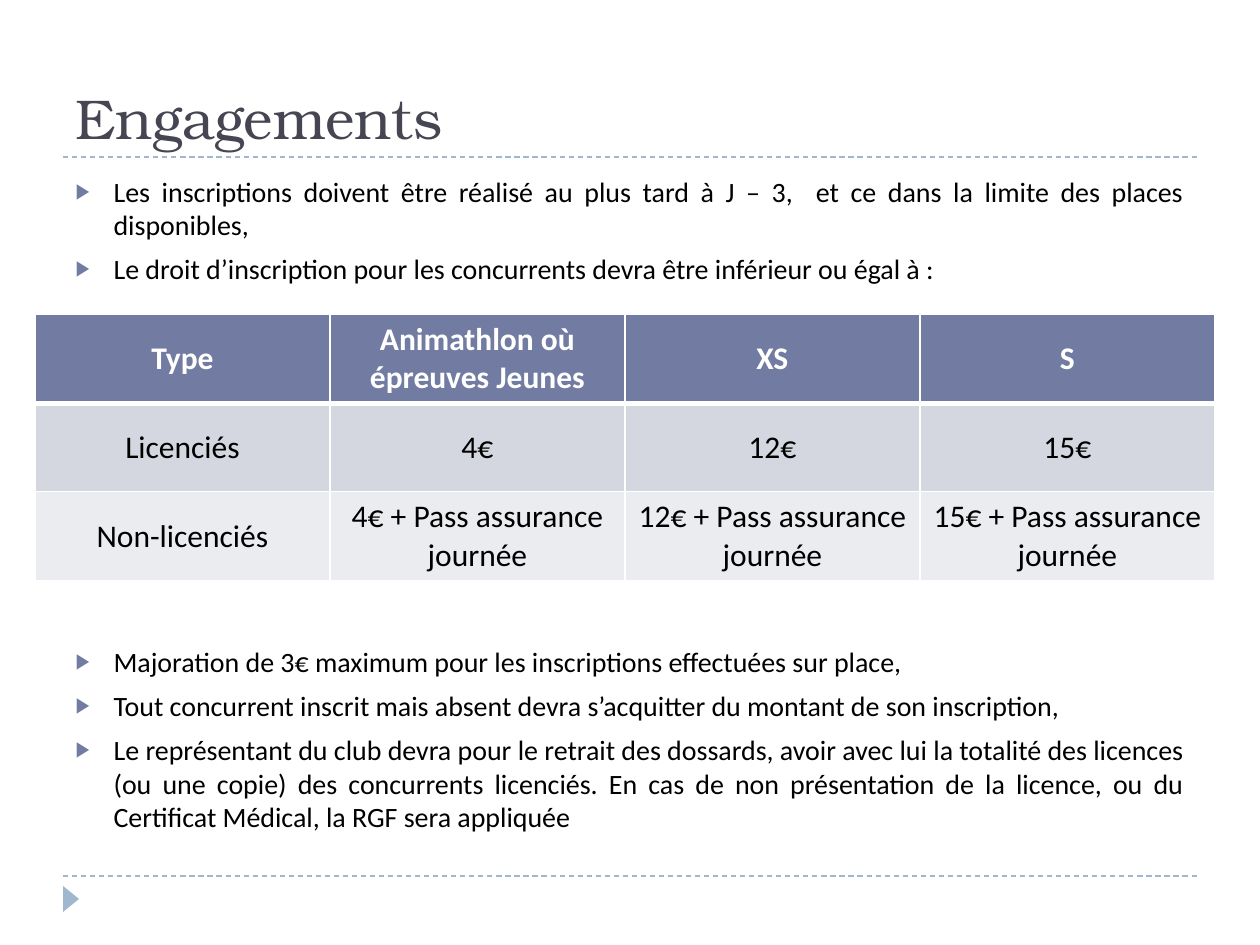
from lxml.etree import SubElement
from pptx import Presentation
from pptx.dml.color import RGBColor
from pptx.enum.dml import MSO_LINE
from pptx.enum.shapes import MSO_CONNECTOR, MSO_SHAPE
from pptx.enum.text import MSO_ANCHOR as Anchor, MSO_AUTO_SIZE, PP_ALIGN as Align
from pptx.oxml.ns import qn
from pptx.util import Pt

EMU_PER_PX = 914400 / 126
INDENT = 38
ACCENT, PALE, BLACK, WHITE = "727CA3", "9FB8CD", "000000", "FFFFFF"
BODY_FONT, TITLE_FONT = "Calibri", "TeX Gyre Bonum"

# Each bullet with the space before it in points; the third clears the table
BULLETS = [
    ("Les inscriptions doivent être réalisé au plus tard à J – 3,  et ce dans la "
     "limite des places disponibles,", 6),
    ("Le droit d’inscription pour les concurrents devra être inférieur ou égal à :", 6),
    ("Majoration de 3€ maximum pour les inscriptions effectuées sur place,", 205),
    ("Tout concurrent inscrit mais absent devra s’acquitter du montant de son "
     "inscription,", 6),
    ("Le représentant du club devra pour le retrait des dossards, avoir avec lui la "
     "totalité des licences (ou une copie) des concurrents licenciés. En cas de non "
     "présentation de la licence, ou du Certificat Médical, la RGF sera appliquée", 6),
]
PRICES = ["4€", "12€", "15€"]
FEES = [
    ["Type", "Animathlon où épreuves Jeunes", "XS", "S"],
    ["Licenciés", *PRICES],
    ["Non-licenciés", *[f"{price} + Pass assurance journée" for price in PRICES]],
]
ROW_FILLS = [ACCENT, "D5D7E0", "EBECF0"]


def px(length):
    return round(length * EMU_PER_PX)


def color(code):
    return RGBColor.from_string(code)


def place(shape, left, top, width, height):
    shape.left, shape.top = px(left), px(top)
    shape.width, shape.height = px(width), px(height)


def write(para, text, size=16, font=BODY_FONT, ink=BLACK, bold=False, align=Align.LEFT):
    para.alignment = align
    span = para.add_run()
    span.text = text
    span.font.size, span.font.name, span.font.bold = Pt(size), font, bold
    span.font.color.rgb = color(ink)


def add_bullet(para):
    props = para._p.get_or_add_pPr()
    props.set("marL", str(px(INDENT)))
    props.set("indent", str(-px(INDENT)))
    SubElement(SubElement(props, qn("a:buClr")), qn("a:srgbClr"), val=ACCENT)
    SubElement(props, qn("a:buSzPct"), val="76000")
    SubElement(props, qn("a:buFont"), typeface="Arial")
    SubElement(props, qn("a:buChar"), char="▶")


def add_rule(page, y):
    rule = page.shapes.add_connector(MSO_CONNECTOR.STRAIGHT, px(63), px(y), px(1197), px(y))
    rule.line.color.rgb = color(PALE)
    rule.line.width = Pt(0.75)
    rule.line.dash_style = MSO_LINE.DASH
    SubElement(rule._element.spPr, qn("a:effectLst"))


def add_marker(page):
    marker = page.shapes.add_shape(MSO_SHAPE.ISOSCELES_TRIANGLE, px(58), px(891), px(26), px(16))
    marker.rotation = 90
    marker.shadow.inherit = False
    marker.fill.solid()
    marker.fill.fore_color.rgb = color(PALE)
    marker.line.fill.background()


def fill_title(box):
    place(box, 63, 21, 1134, 136)
    frame = box.text_frame
    frame.auto_size = MSO_AUTO_SIZE.NONE
    frame.vertical_anchor = Anchor.BOTTOM
    write(frame.paragraphs[0], "Engagements", size=32, font=TITLE_FONT, ink="464653")


def fill_body(box):
    place(box, 63, 168, 1134, 741)
    frame = box.text_frame
    frame.auto_size = MSO_AUTO_SIZE.NONE
    for index, (text, gap) in enumerate(BULLETS):
        para = frame.add_paragraph() if index else frame.paragraphs[0]
        para.space_before = Pt(gap)
        write(para, text, align=Align.JUSTIFY)
        add_bullet(para)


def add_borders(cell, **widths):
    props = cell._tc.get_or_add_tcPr()
    for side in "LRTB":
        line = SubElement(props, qn(f"a:ln{side}"), w=str(Pt(widths.get(side, 1))))
        SubElement(SubElement(line, qn("a:solidFill")), qn("a:srgbClr"), val=WHITE)


def add_fee_table(page):
    table = page.shapes.add_table(len(FEES), len(FEES[0]), px(35), px(314),
                                  px(1180), px(264)).table
    for r, row in enumerate(FEES):
        header = r == 0
        for c, text in enumerate(row):
            cell = table.cell(r, c)
            add_borders(cell, T=3 if r == 1 else 1, B=3 if header else 1)
            cell.fill.solid()
            cell.fill.fore_color.rgb = color(ROW_FILLS[r])
            cell.vertical_anchor = Anchor.MIDDLE
            write(cell.text_frame.paragraphs[0], text, size=18, bold=header,
                  ink=WHITE if header else BLACK, align=Align.CENTER)


def main():
    deck = Presentation()
    deck.slide_width, deck.slide_height = px(1260), px(945)
    page = deck.slides.add_slide(deck.slide_layouts[1])

    # Frame: two dashed rules and the corner marker
    for y in (876, 157):
        add_rule(page, y)
    add_marker(page)

    # Title, bullets and fees
    fill_title(page.shapes.title)
    fill_body(page.placeholders[1])
    add_fee_table(page)

    deck.save("out.pptx")


if __name__ == "__main__":
    main()
